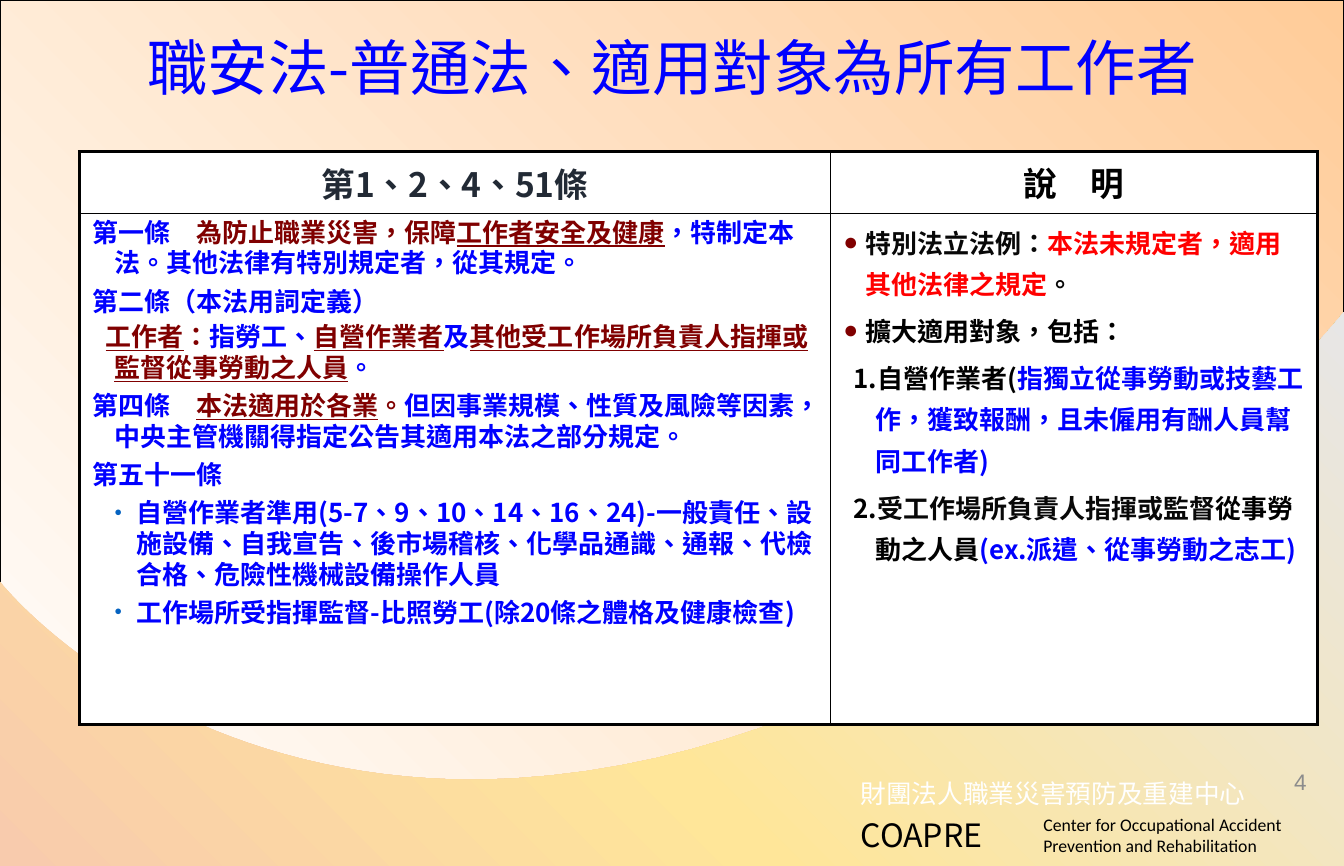
from lxml import etree
from pptx import Presentation
from pptx.dml.color import RGBColor
from pptx.enum.shapes import MSO_SHAPE
from pptx.enum.text import MSO_ANCHOR, MSO_AUTO_SIZE, PP_ALIGN
from pptx.oxml import parse_xml
from pptx.oxml.ns import qn
from pptx.util import Cm, Pt

CENTER, RIGHT = PP_ALIGN.CENTER, PP_ALIGN.RIGHT
TOP, MIDDLE = MSO_ANCHOR.TOP, MSO_ANCHOR.MIDDLE
RECTANGLE = MSO_SHAPE.RECTANGLE
NO_AUTO_SIZE = MSO_AUTO_SIZE.NONE

BLUE = RGBColor(0x00, 0x00, 0xFF)
MAROON = RGBColor(0x80, 0x00, 0x00)
RED = RGBColor(0xFF, 0x00, 0x00)
BLACK = RGBColor(0x00, 0x00, 0x00)
INK = RGBColor(0x08, 0x08, 0x08)
NAVY = RGBColor(0x22, 0x2A, 0x35)
LINK_BLUE = RGBColor(0x05, 0x63, 0xC1)
GRAY = RGBColor(0x8C, 0x8C, 0x8C)
WHITE = RGBColor(0xFF, 0xFF, 0xFF)
ORANGE = RGBColor(0xFF, 0xCC, 0x99)
PALE_GRAY = RGBColor(0xE7, 0xE6, 0xE6)
YELLOW = RGBColor(0xFF, 0xE6, 0x99)
PEACH = RGBColor(0xF8, 0xCB, 0xAD)

NOTO = "Noto Sans CJK SC"
WIDTH, HEIGHT = Pt(880), Pt(567)
DRAWING = 'xmlns:a="http://schemas.openxmlformats.org/drawingml/2006/main"'

SMALL_DOT = (LINK_BLUE, 50)
LARGE_DOT = (MAROON, 95)


def law(before=5.1, left=0.51, hanging=0.51, bullet=None):
    return {"format": {"line_spacing": Pt(20), "space_before": Pt(before)},
            "left": left, "hanging": hanging, "bullet": bullet}


def remark(before=3.4, left=0.51, bullet=None):
    return {"format": {"line_spacing": 1.1, "space_before": Pt(before)},
            "left": left, "hanging": 0.51, "bullet": bullet}


# Each paragraph is a layout and its runs: text, colour, underlined or not.
ARTICLES = [
    (law(before=0), [("第一條\u3000", BLUE), ("為防止職業災害，保障", MAROON),
                     ("工作者安全及健康", MAROON, True),
                     ("，特制定本法。其他法律有特別規定者，從其規定。", BLUE)]),
    (law(), [("第二條（本法用詞定義）", BLUE)]),
    (law(before=3.4, hanging=0.2), [
        ("工作者", MAROON, True), ("：", MAROON), ("指勞工、", BLUE),
        ("自營作業者", MAROON, True), ("及", BLUE),
        ("其他受工作場所負責人指揮或監督從事勞動之人員", MAROON, True), ("。", BLUE)]),
    (law(), [("第四條\u3000", BLUE), ("本法適用於各業", MAROON, True), ("。", MAROON),
             ("但因事業規模、性質及風險等因素，中央主管機關得指定公告其適用本法之部分規定。", BLUE)]),
    (law(), [("第五十一條", BLUE)]),
    (law(left=1.02, bullet=SMALL_DOT), [
        ("自營作業者準用(5-7、9、10、14、16、24)-一般責任、設施設備、自我宣告、"
         "後市場稽核、化學品通識、通報、代檢合格、危險性機械設備操作人員", BLUE)]),
    (law(left=1.02, bullet=SMALL_DOT), [
        ("工作場所受指揮監督-比照勞工(除20條之體格及健康檢查)", BLUE)]),
]
REMARKS = [
    (remark(before=0, bullet=LARGE_DOT), [
        ("特別法立法例：", INK), ("本法未規定者，適用其他法律之規定", RED), ("。", INK)]),
    (remark(bullet=LARGE_DOT), [("擴大適用對象，包括：", BLACK)]),
    (remark(left=0.74), [
        ("1.自營作業者(", BLACK),
        ("指獨立從事勞動或技藝工作，獲致報酬，且未僱用有酬人員幫同工作者)", BLUE)]),
    (remark(left=0.74), [
        ("2.", BLACK), ("受工作場所負責人指揮或監督", INK), ("從事勞動之人員", BLACK),
        ("(ex.派遣、從事勞動之志工)", BLUE)]),
]
HEADING = {"format": {"alignment": CENTER}}


def set_values(target, values):
    for name, value in values.items():
        setattr(target, name, value)


def add_span(para, text, color, size, underline=False, bold=False, font=NOTO):
    span = para.add_run()
    span.text = text
    set_values(span.font, {"size": Pt(size), "bold": bold,
                           "underline": underline, "name": font})
    span.font.color.rgb = color
    properties = span.font._element
    properties.set("lang", "zh-TW")
    etree.SubElement(properties, qn("a:ea")).set("typeface", font)


def add_bullet(para, color, percent):
    properties = para._p.get_or_add_pPr()
    for xml in (f'<a:buClr {DRAWING}><a:srgbClr val="{color}"/></a:buClr>',
                f'<a:buSzPct {DRAWING} val="{percent * 1000}"/>',
                f'<a:buFont {DRAWING} typeface="Arial"/>',
                f'<a:buChar {DRAWING} char="●"/>'):
        properties.append(parse_xml(xml))


def fill_cell(cell, paragraphs, size, anchor=TOP):
    cell.fill.solid()
    cell.fill.fore_color.rgb = WHITE
    set_values(cell, {"vertical_anchor": anchor, "margin_left": Cm(0.3),
                      "margin_right": Cm(0.3), "margin_top": Cm(0.13),
                      "margin_bottom": Cm(0.13)})
    for index, (layout, spans) in enumerate(paragraphs):
        frame = cell.text_frame
        para = frame.add_paragraph() if index else frame.paragraphs[0]
        set_values(para, layout["format"])
        if "left" in layout:
            properties = para._p.get_or_add_pPr()
            properties.set("marL", str(int(Cm(layout["left"]))))
            properties.set("indent", str(-int(Cm(layout["hanging"]))))
        if layout.get("bullet"):
            add_bullet(para, *layout["bullet"])
        for text, color, *underline in spans:
            add_span(para, text, color, size, bool(underline), bold=True)


def set_borders(cell, row, column):
    """Thick lines around the two by two table, thin lines inside it."""
    outer = {"L": column == 0, "R": column == 1, "T": row == 0, "B": row == 1}
    for position, (side, thick) in enumerate(outer.items()):
        line = parse_xml(
            f'<a:ln{side} {DRAWING} w="{int(Pt(2.25 if thick else 1))}">'
            f'<a:solidFill><a:srgbClr val="{BLACK}"/></a:solidFill></a:ln{side}>')
        cell._tc.get_or_add_tcPr().insert(position, line)


def add_law_table(page):
    table = page.shapes.add_table(2, 2, Cm(1.83), Cm(3.51), Cm(28.6), Cm(13.23)).table
    set_values(table, {"first_row": False, "horz_banding": False})
    for column, width in zip(table.columns, (17.35, 11.25)):
        column.width = Cm(width)
    for row, height in zip(table.rows, (1.42, 11.81)):
        row.height = Cm(height)
    fill_cell(table.cell(0, 0), [(HEADING, [("第1、2、4、51條", NAVY)])], 22, MIDDLE)
    fill_cell(table.cell(0, 1), [(HEADING, [("說\u3000明", BLACK)])], 22)
    fill_cell(table.cell(1, 0), ARTICLES, 17)
    fill_cell(table.cell(1, 1), REMARKS, 17)
    for row in range(2):
        for column in range(2):
            set_borders(table.cell(row, column), row, column)


def set_gradient(shape, stops, direction):
    colors = "".join(f'<a:gs pos="{percent * 1000}"><a:srgbClr val="{color}"/></a:gs>'
                     for percent, color in stops)
    shape.shadow.inherit = False
    geometry = shape._element.spPr.find(qn("a:prstGeom"))
    if geometry is None:
        geometry = shape._element.spPr.find(qn("a:custGeom"))
    geometry.addnext(parse_xml(
        f'<a:gradFill {DRAWING}><a:gsLst>{colors}</a:gsLst>{direction}</a:gradFill>'))


def curve_points(start, control_1, control_2, end, steps=40):
    for step in range(1, steps + 1):
        t = step / steps
        weights = ((1 - t) ** 3, 3 * t * (1 - t) ** 2, 3 * t * t * (1 - t), t ** 3)
        corners = (start, control_1, control_2, end)
        yield tuple(int(sum(w * p[axis] for w, p in zip(weights, corners)))
                    for axis in (0, 1))


def add_background(page):
    backdrop = page.shapes.add_shape(RECTANGLE, 0, 0, WIDTH, HEIGHT)
    set_gradient(backdrop, [(0, WHITE), (100, ORANGE)],
                 '<a:lin ang="18900000" scaled="0"/>')
    backdrop.line.color.rgb = BLACK
    backdrop.line.width = Pt(0.75)

    left, right, low = (0, Cm(13.44)), (WIDTH, Cm(7.21)), (Cm(11), Cm(18.01))
    points = [(0, HEIGHT), (WIDTH, HEIGHT), right]
    points += curve_points(right, right, (Cm(22.48), Cm(17.88)), low)
    points += curve_points(low, (Cm(3.58), Cm(18.01)), left, left)
    builder = page.shapes.build_freeform(*left)
    builder.add_line_segments(points, close=True)
    wave = builder.convert_to_shape()
    set_gradient(wave, [(0, PALE_GRAY), (59, YELLOW), (100, PEACH)],
                 '<a:path path="circle"><a:fillToRect l="100000" b="100000"/></a:path>')
    wave.line.fill.background()


def add_label(page, bounds, text, color, size, font=NOTO, alignment=None):
    box = page.shapes.add_textbox(*map(Cm, bounds))
    set_values(box.text_frame, {"word_wrap": True, "vertical_anchor": MIDDLE})
    para = box.text_frame.paragraphs[0]
    para.alignment = alignment
    add_span(para, text, color, size, font=font)
    return box


def add_glow(box, color):
    box._element.spPr.append(parse_xml(
        f'<a:effectLst {DRAWING}><a:glow rad="{int(Pt(3))}">'
        f'<a:srgbClr val="{color}"/></a:glow></a:effectLst>'))


def place_title(page, text):
    title = page.shapes.title
    set_values(title, {"left": Cm(0.18), "top": Cm(0.62),
                       "width": Cm(30.68), "height": Cm(1.83)})
    set_values(title.text_frame, {"auto_size": NO_AUTO_SIZE, "word_wrap": True,
                                  "vertical_anchor": MIDDLE})
    para = title.text_frame.paragraphs[0]
    para.alignment = CENTER
    add_span(para, text, BLUE, 39.6)
    page.shapes._spTree.append(title._element)  # in front of the background


def main():
    deck = Presentation()
    set_values(deck, {"slide_width": WIDTH, "slide_height": HEIGHT})
    page = deck.slides.add_slide(deck.slide_layouts[5])
    add_background(page)
    center_name = add_label(page, (19.63, 17.83, 11.4, 0.97),
                            "財團法人職業災害預防及重建中心", WHITE, 16.8)
    add_glow(center_name, BLACK)
    add_label(page, (19.63, 18.72, 4.62, 1.14), "COAPRE", BLACK, 21)
    add_label(page, (23.85, 18.67, 7.19, 1.24),
              "Center for Occupational Accident Prevention and Rehabilitation",
              BLACK, 11.6, "Calibri")
    place_title(page, "職安法-普通法、適用對象為所有工作者")
    add_law_table(page)
    add_label(page, (28.96, 17.58, 1.47, 0.94), "4", GRAY, 14.7, "Arial", RIGHT)
    deck.save("out.pptx")


if __name__ == "__main__":
    main()
